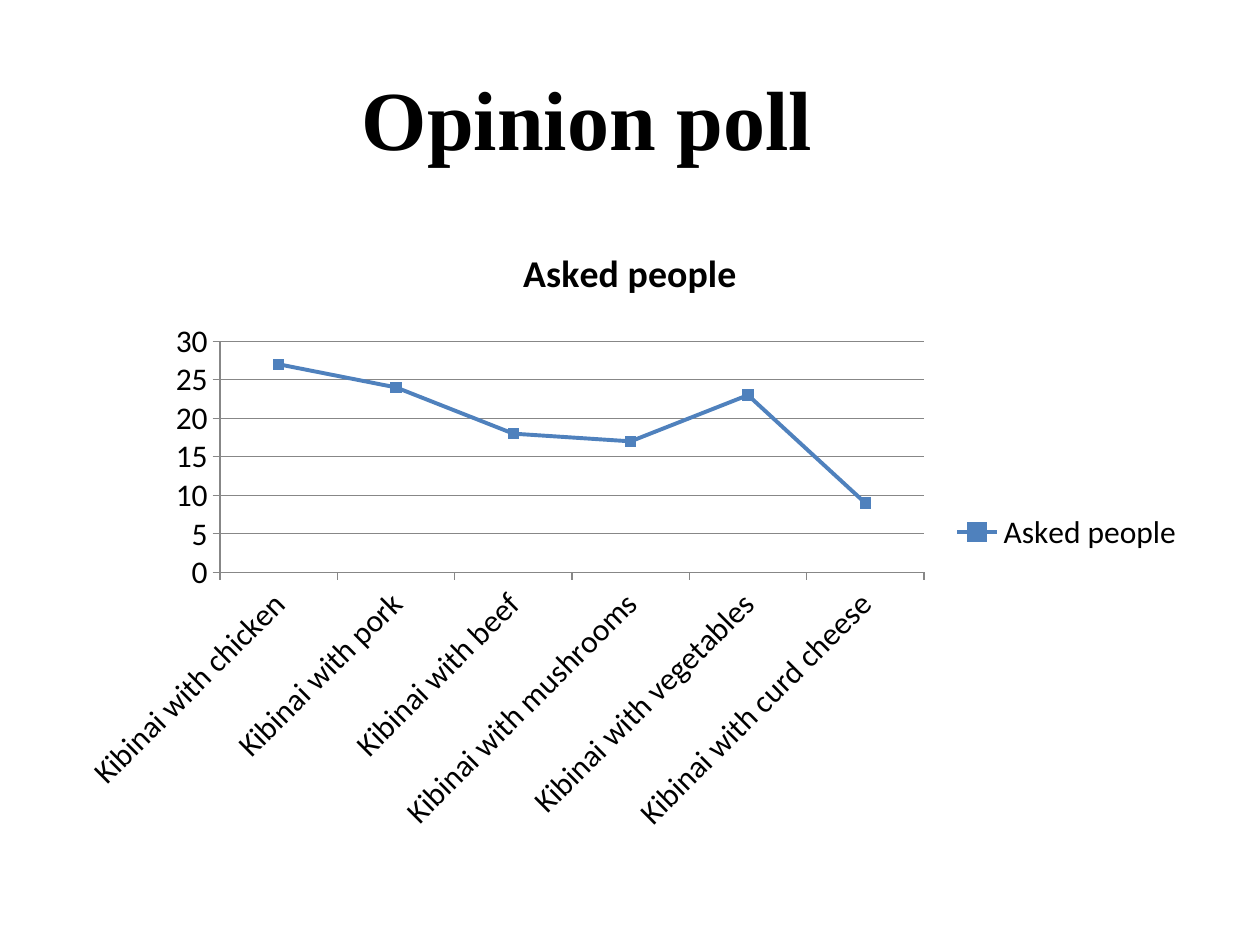
"""Build the opinion poll slide with a line chart of answers."""
from dataclasses import dataclass

from pptx import Presentation
from pptx.chart import data as chart_data
from pptx.dml.color import RGBColor
from pptx.enum import chart as chart_enum, text
from pptx.util import Inches, Pt

BLACK, GREY, BLUE = "000000", "878787", "4F81BD"


@dataclass
class Answer:
    filling: str
    people: int


ANSWERS = [
    Answer("chicken", 27),
    Answer("pork", 24),
    Answer("beef", 18),
    Answer("mushrooms", 17),
    Answer("vegetables", 23),
    Answer("curd cheese", 9),
]


def color(value: str) -> RGBColor:
    return RGBColor.from_string(value)


def style_font(font, name: str, size: float, bold: bool) -> None:
    font.name, font.size, font.bold = name, Pt(size), bold
    font.color.rgb = color(BLACK)


def style_line(line, value: str, width: float) -> None:
    line.color.rgb = color(value)
    line.width = Pt(width)


def add_title(slide, title: str) -> None:
    shape = slide.shapes.title
    shape.left, shape.top = Inches(0.5), Inches(0.3)
    shape.width, shape.height = Inches(9), Inches(1.25)
    frame = shape.text_frame
    frame.text = title
    frame.vertical_anchor = text.MSO_ANCHOR.MIDDLE
    frame.margin_right = Inches(0.78)
    paragraph = frame.paragraphs[0]
    paragraph.alignment = text.PP_ALIGN.CENTER
    style_font(paragraph.runs[0].font, "Times New Roman", 48, True)


def add_poll_chart(slide, name: str, answers: list[Answer]) -> None:
    poll = chart_data.CategoryChartData()
    poll.categories = [f"Kibinai with {answer.filling}" for answer in answers]
    poll.add_series(name, [answer.people for answer in answers])
    chart = slide.shapes.add_chart(
        chart_enum.XL_CHART_TYPE.LINE_MARKERS,
        Inches(0.5), Inches(1.75), Inches(9), Inches(4.95), poll,
    ).chart
    style_font(chart.font, "Calibri", 18, False)

    chart.has_title = True
    chart.chart_title.include_in_layout = False
    chart.chart_title.text_frame.text = name
    run = chart.chart_title.text_frame.paragraphs[0].runs[0]
    style_font(run.font, "Calibri", 21.6, True)

    chart.has_legend = True
    chart.legend.position = chart_enum.XL_LEGEND_POSITION.RIGHT
    chart.legend.include_in_layout = False

    for axis in (chart.category_axis, chart.value_axis):
        axis.major_tick_mark = chart_enum.XL_TICK_MARK.OUTSIDE
        style_line(axis.format.line, GREY, 0.75)
    chart.value_axis.has_major_gridlines = True
    style_line(chart.value_axis.major_gridlines.format.line, GREY, 0.75)

    chart.plots[0].vary_by_categories = False
    series = chart.plots[0].series[0]
    series.smooth = False
    style_line(series.format.line, BLUE, 2.25)
    series.marker.style = chart_enum.XL_MARKER_STYLE.SQUARE
    series.marker.size = 6
    series.marker.format.fill.solid()
    series.marker.format.fill.fore_color.rgb = color(BLUE)
    style_line(series.marker.format.line, BLUE, 0.75)


def main() -> None:
    presentation = Presentation()
    presentation.slide_width, presentation.slide_height = Inches(10), Inches(7.5)
    slide = presentation.slides.add_slide(presentation.slide_layouts[5])
    add_title(slide, "Opinion poll")
    add_poll_chart(slide, "Asked people", ANSWERS)
    presentation.save("out.pptx")


if __name__ == "__main__":
    main()
